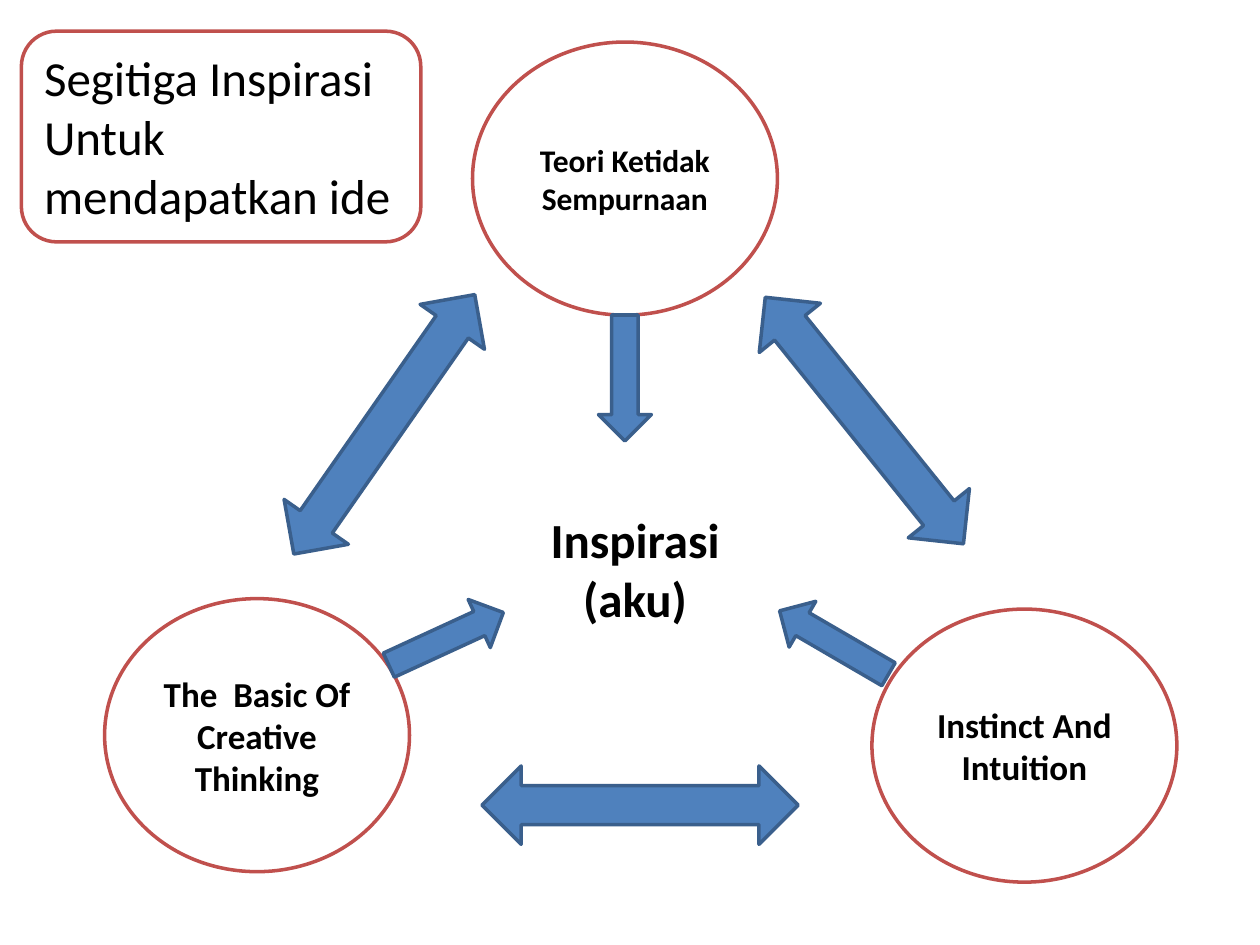
from dataclasses import dataclass

from pptx import Presentation
from pptx.dml.color import RGBColor
from pptx.enum.shapes import MSO_SHAPE
from pptx.enum.text import MSO_ANCHOR, PP_ALIGN
from pptx.util import Inches, Pt


@dataclass(frozen=True)
class Theme:
    font: str = "Calibri"
    ink: str = "000000"
    paper: str = "FFFFFF"
    outline: str = "C0504D"
    arrow: str = "4F81BD"
    arrow_edge: str = "3A5F8C"
    heading: int = 28
    label: int = 20
    small_label: int = 18
    stroke: int = 2


THEME = Theme()
WIDTH, HEIGHT = 10, 7.5

TITLE = ["Segitiga Inspirasi", "Untuk mendapatkan ide"]
TITLE_BOX = (0.017, 0.033, 0.317, 0.223)
CENTRE = ["Inspirasi (aku)"]
CENTRE_BOX = (0.425, 0.533, 0.158, 0.139)

CORNER_SIZE = (0.242, 0.289)
CORNERS = [
    ("Teori Ketidak Sempurnaan", (0.496, 0.189), THEME.small_label),
    ("Instinct And Intuition", (0.813, 0.789), THEME.label),
    ("The  Basic Of Creative Thinking", (0.204, 0.778), THEME.label),
]

SIDE_SIZE = (0.251, 0.083)
SIDES = [
    ((0.305, 0.449), 304.9),
    ((0.686, 0.445), 51.2),
    ((0.508, 0.852), 0),
]

INWARD_SIZE = (0.1, 0.056)
INWARD = [
    ((0.354, 0.676), 155.3),
    ((0.496, 0.4), 270),
    ((0.662, 0.68), 30.2),
]


def place(box):
    left, top, width, height = box
    return (Inches(left * WIDTH), Inches(top * HEIGHT),
            Inches(width * WIDTH), Inches(height * HEIGHT))


def around(centre, size):
    return (centre[0] - size[0] / 2, centre[1] - size[1] / 2, *size)


def add_figure(slide, preset, box, fill, edge, rotation=0):
    figure = slide.shapes.add_shape(preset, *place(box))
    figure.shadow.inherit = False
    figure.rotation = rotation
    figure.fill.solid()
    figure.fill.fore_color.rgb = RGBColor.from_string(fill)
    figure.line.color.rgb = RGBColor.from_string(edge)
    figure.line.width = Pt(THEME.stroke)
    return figure


def write(holder, lines, size, bold=False, align=PP_ALIGN.CENTER,
          anchor=MSO_ANCHOR.TOP):
    frame = holder.text_frame
    frame.word_wrap = True
    frame.vertical_anchor = anchor
    for index, line in enumerate(lines):
        paragraph = frame.add_paragraph() if index else frame.paragraphs[0]
        paragraph.alignment = align
        run = paragraph.add_run()
        run.text = line
        run.font.name = THEME.font
        run.font.size = Pt(size)
        run.font.bold = bold
        run.font.color.rgb = RGBColor.from_string(THEME.ink)


def main():
    deck = Presentation()
    deck.slide_width, deck.slide_height = Inches(WIDTH), Inches(HEIGHT)
    slide = deck.slides.add_slide(deck.slide_layouts[6])

    for label, centre, size in CORNERS:
        corner = add_figure(slide, MSO_SHAPE.OVAL, around(centre, CORNER_SIZE),
                            THEME.paper, THEME.outline)
        write(corner, [label], size, bold=True, anchor=MSO_ANCHOR.MIDDLE)

    for preset, size, arrows in (
        (MSO_SHAPE.LEFT_RIGHT_ARROW, SIDE_SIZE, SIDES),
        (MSO_SHAPE.LEFT_ARROW, INWARD_SIZE, INWARD),
    ):
        for centre, rotation in arrows:
            add_figure(slide, preset, around(centre, size),
                       THEME.arrow, THEME.arrow_edge, rotation)

    inspiration = slide.shapes.add_textbox(*place(CENTRE_BOX))
    write(inspiration, CENTRE, THEME.heading, bold=True)

    title = add_figure(slide, MSO_SHAPE.ROUNDED_RECTANGLE, TITLE_BOX,
                       THEME.paper, THEME.outline)
    write(title, TITLE, THEME.heading, align=PP_ALIGN.LEFT)

    deck.save("out.pptx")


if __name__ == "__main__":
    main()
